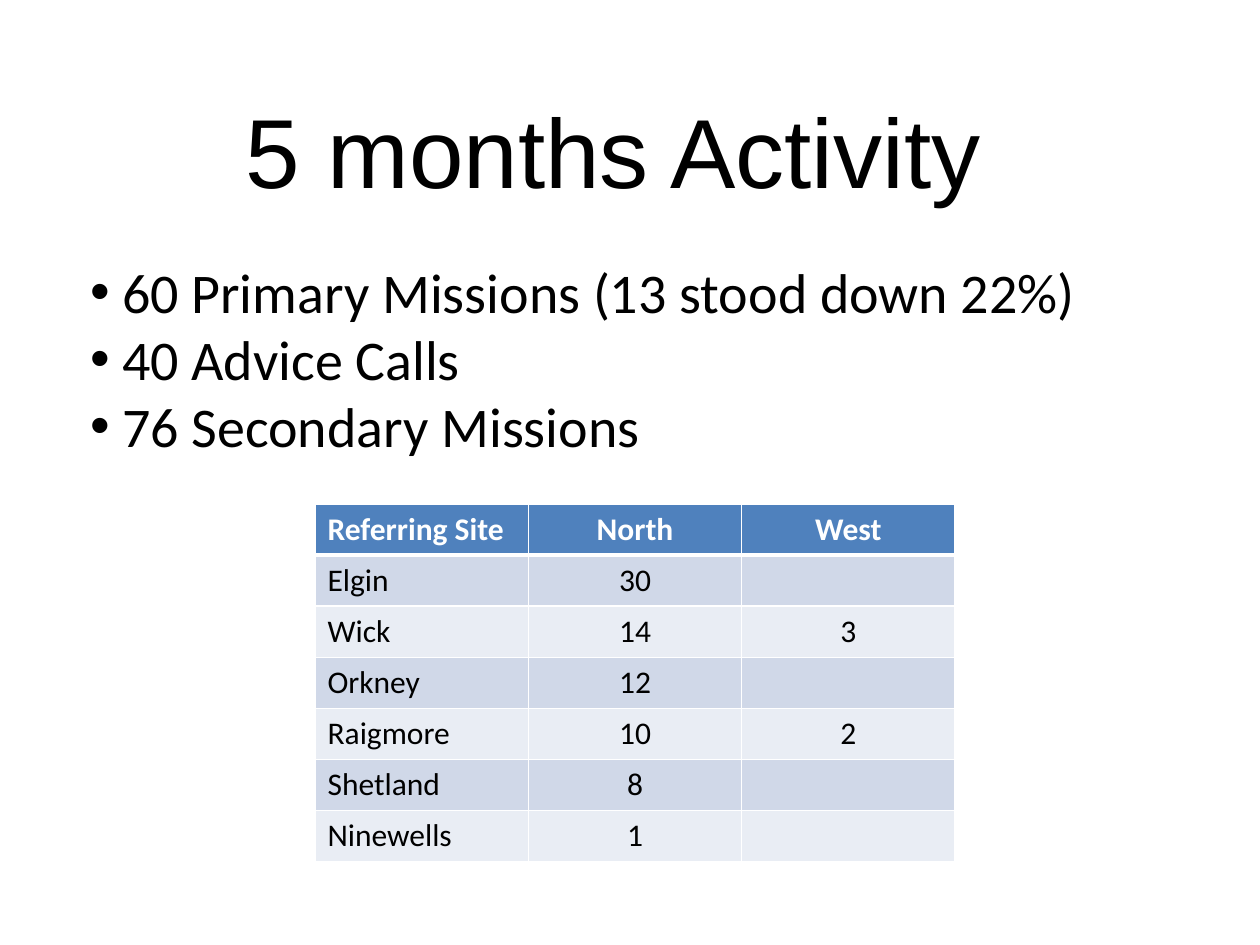
from pptx import Presentation
from pptx.dml.color import RGBColor
from pptx.enum.text import MSO_ANCHOR as Anchor, PP_ALIGN as Align
from pptx.oxml.ns import qn
from pptx.util import Inches, Pt
from lxml.etree import SubElement

# Content
TITLE = "5 months Activity"
BULLETS = [
    "60 Primary Missions (13 stood down 22%)",
    "40 Advice Calls",
    "76 Secondary Missions",
]
REFERRALS = [
    ("Referring Site", "North", "West"),
    ("Elgin", "30", ""),
    ("Wick", "14", "3"),
    ("Orkney", "12", ""),
    ("Raigmore", "10", "2"),
    ("Shetland", "8", ""),
    ("Ninewells", "1", ""),
]

BLACK = RGBColor(0x00, 0x00, 0x00)
WHITE = RGBColor(0xFF, 0xFF, 0xFF)
HEADER_BLUE = RGBColor(0x4F, 0x81, 0xBD)
BANDS = (RGBColor(0xE9, 0xED, 0xF4), RGBColor(0xD0, 0xD8, 0xE8))


def add_span(para, text, font, size, color=BLACK, bold=False):
    span = para.add_run()
    span.text = text
    span.font.name = font
    span.font.size = Pt(size)
    span.font.color.rgb = color
    span.font.bold = bold


def add_frame(page, left, top, width, height, anchor=Anchor.TOP):
    box = page.shapes.add_textbox(*map(Inches, (left, top, width, height)))
    frame = box.text_frame
    frame.word_wrap = True
    frame.vertical_anchor = anchor
    frame.margin_left = frame.margin_right = 0
    frame.margin_top = frame.margin_bottom = 0
    return frame


def set_bullet(para, indent):
    properties = para._p.get_or_add_pPr()
    properties.set("marL", str(indent))
    properties.set("indent", str(-indent))
    SubElement(properties, qn("a:buFont"), typeface="Arial")
    SubElement(properties, qn("a:buChar"), char="•")


def set_borders(cell, bottom):
    # Borders must come before the cell fill
    properties = cell._tc.get_or_add_tcPr()
    for side, width in (("L", 1), ("R", 1), ("T", 1), ("B", bottom)):
        line = SubElement(properties, qn(f"a:ln{side}"), w=str(Pt(width)))
        fill = SubElement(line, qn("a:solidFill"))
        SubElement(fill, qn("a:srgbClr"), val=str(WHITE))


deck = Presentation()
deck.slide_width, deck.slide_height = Inches(10), Inches(7.5)
page = deck.slides.add_slide(deck.slide_layouts[6])

# Title
title = add_frame(page, 1.95, 0.68, 6.11, 0.97, Anchor.BOTTOM)
add_span(title.paragraphs[0], TITLE, "Arial", 56)

# Activity bullets
body = add_frame(page, 0.72, 2.04, 8.56, 1.62)
for index, text in enumerate(BULLETS):
    para = body.add_paragraph() if index else body.paragraphs[0]
    set_bullet(para, Inches(0.25))
    add_span(para, text, "Calibri", 32)

# Referral table
table = page.shapes.add_table(
    len(REFERRALS), len(REFERRALS[0]),
    Inches(2.5), Inches(4), Inches(5.08), Inches(2.84),
).table
for row, values in enumerate(REFERRALS):
    header = row == 0
    for column, text in enumerate(values):
        cell = table.cell(row, column)
        set_borders(cell, 3 if row < 1 else 1)
        cell.fill.solid()
        cell.fill.fore_color.rgb = HEADER_BLUE if header else BANDS[row % 2]
        para = cell.text_frame.paragraphs[0]
        para.alignment = Align.CENTER if column else Align.LEFT
        if text:
            add_span(para, text, "Calibri", 18, WHITE if header else BLACK, header)

deck.save("out.pptx")
